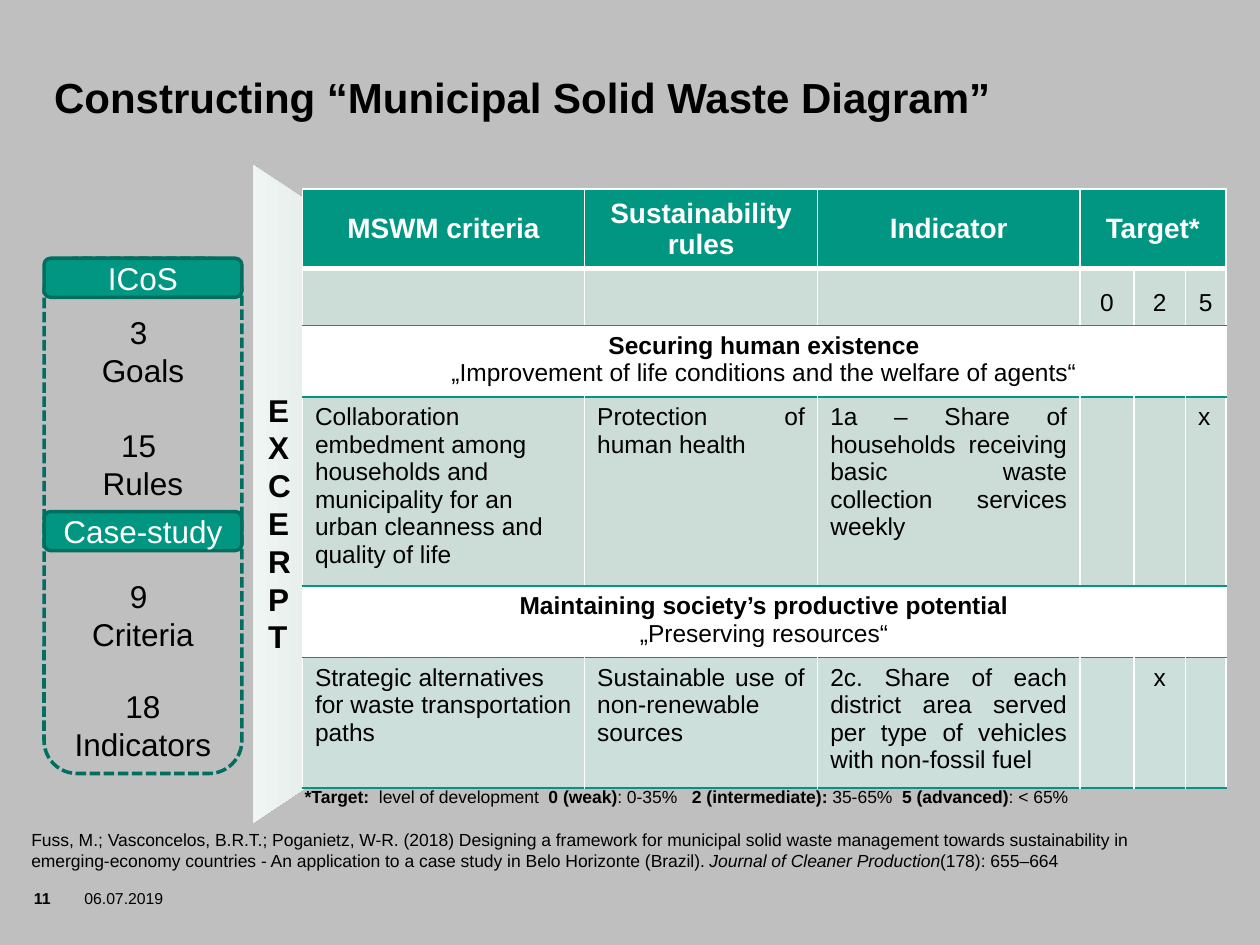
from copy import deepcopy

from lxml.etree import SubElement
from pptx import Presentation
from pptx.dml.color import RGBColor
from pptx.enum.dml import MSO_LINE
from pptx.enum.shapes import MSO_SHAPE
from pptx.enum.text import MSO_ANCHOR, PP_ALIGN
from pptx.oxml.ns import qn
from pptx.util import Inches, Pt

WIDTH, HEIGHT = Inches(10), Inches(7.5)
GREEN, DARK_GREEN, MINT, PALE_MINT = "009682", "006F60", "CCDDD8", "CCDFDA"
BLACK, WHITE, GREY = "000000", "FFFFFF", "BFBFBF"
LEFT, CENTER, JUSTIFY = PP_ALIGN.LEFT, PP_ALIGN.CENTER, PP_ALIGN.JUSTIFY

PANEL_LEFT, PANEL_TOP, PANEL_WIDTH = 3.5, 27.33, 15.7
COLUMNS = [22.4, 18.5, 20.8, 4.3, 4.1, 3.2]
ROWS = [8.27, 5.2, 7.47, 19.73, 7.47, 13.6]


def color(value):
    return RGBColor.from_string(value)


def across(percent):
    return round(WIDTH * percent / 100)


def down(percent):
    return round(HEIGHT * percent / 100)


def area(left, top, width, height):
    return across(left), down(top), across(width), down(height)


def paint(fill, value):
    fill.solid()
    fill.fore_color.rgb = color(value)


def write(frame, lines, size, ink=BLACK, align=LEFT, bold=False):
    frame.text = "\n".join(lines)
    for paragraph in frame.paragraphs:
        paragraph.alignment = align
        for run in paragraph.runs:
            style(run, size, ink, bold)


def style(run, size, ink=BLACK, bold=False, italic=False):
    run.font.name = "Arial"
    run.font.size = Pt(size)
    run.font.color.rgb = color(ink)
    run.font.bold = bold
    run.font.italic = italic


def add_text(slide, place, lines, size, bold=False, inset=True, anchor=MSO_ANCHOR.TOP):
    frame = slide.shapes.add_textbox(*area(*place)).text_frame
    frame.word_wrap = True
    frame.vertical_anchor = anchor
    if not inset:
        frame.margin_left = frame.margin_right = 0
        frame.margin_top = frame.margin_bottom = 0
    write(frame, lines, size, bold=bold)
    return frame


def add_mixed_text(slide, place, pieces, size):
    paragraph = add_text(slide, place, [], size).paragraphs[0]
    for words, bold, italic in pieces:
        run = paragraph.add_run()
        run.text = words
        style(run, size, bold=bold, italic=italic)


def add_funnel(slide):
    funnel = slide.shapes.add_shape(
        MSO_SHAPE.ISOSCELES_TRIANGLE, *area(13.7, 26, 52.2, 52.53))
    funnel.rotation = 90
    funnel.shadow.inherit = False
    funnel.line.fill.background()
    funnel.fill.gradient()
    funnel.fill.gradient_angle = 270
    first_stop = funnel._element.spPr.find(".//" + qn("a:gs"))
    first_stop.addnext(deepcopy(first_stop))
    shades = [(0, "8D9190"), (0.5, "C8CECD"), (1, "EEF5F3")]
    for stop, (position, shade) in zip(funnel.fill.gradient_stops, shades):
        stop.position = position
        stop.color.rgb = color(shade)


def add_rounded(slide, top, height):
    rounded = slide.shapes.add_shape(
        MSO_SHAPE.ROUNDED_RECTANGLE, *area(PANEL_LEFT, top, PANEL_WIDTH, height))
    rounded.shadow.inherit = False
    rounded.line.color.rgb = color(DARK_GREEN)
    rounded.line.width = Pt(2)
    return rounded


def add_counts_panel(slide):
    panel = add_rounded(slide, PANEL_TOP, 54.53)
    panel.fill.background()
    panel.line.dash_style = MSO_LINE.SQUARE_DOT
    frame = panel.text_frame
    frame.vertical_anchor = MSO_ANCHOR.TOP
    frame.margin_top = down(4.8)
    counts = ["3 ", "Goals", "15 ", "Rules", "9 ", "Criteria", "18 Indicators"]
    write(frame, counts, 18, align=CENTER)
    for index, gap in {2: 21.5, 4: 43, 6: 19.5}.items():
        frame.paragraphs[index].space_before = Pt(gap)


def add_panel_heading(slide, top, heading):
    banner = add_rounded(slide, top, 4.13)
    paint(banner.fill, GREEN)
    banner.text_frame.vertical_anchor = MSO_ANCHOR.MIDDLE
    write(banner.text_frame, [heading], 18, WHITE, CENTER)


def set_borders(cell, row):
    top = (WHITE, 1) if row == 0 else (WHITE, 3) if row == 1 else (GREEN, 1)
    bottom = (WHITE, 3) if row == 0 else (GREEN, 1)
    edges = {"lnL": (WHITE, 1), "lnR": (WHITE, 1), "lnT": top, "lnB": bottom}
    properties = cell._tc.get_or_add_tcPr()
    for edge, (ink, points) in edges.items():
        line = SubElement(properties, qn(f"a:{edge}"), w=str(Pt(points)))
        fill = SubElement(line, qn("a:solidFill"))
        SubElement(fill, qn("a:srgbClr"), val=ink)


def add_criteria_table(slide):
    place = area(24, 20, sum(COLUMNS), sum(ROWS))
    table = slide.shapes.add_table(len(ROWS), len(COLUMNS), *place).table
    for column, width in zip(table.columns, COLUMNS):
        column.width = across(width)
    for row, height in zip(table.rows, ROWS):
        row.height = down(height)

    fills = [GREEN, MINT, WHITE, MINT, WHITE, PALE_MINT]
    for row, fill in enumerate(fills):
        for column in range(len(COLUMNS)):
            cell = table.cell(row, column)
            set_borders(cell, row)
            paint(cell.fill, fill)

    for row, first in [(0, 3), (2, 0), (4, 0)]:
        table.cell(row, first).merge(table.cell(row, len(COLUMNS) - 1))

    headings = ["MSWM criteria", "Sustainability rules", "Indicator", "Target*"]
    for column, heading in enumerate(headings):
        cell = table.cell(0, column)
        cell.vertical_anchor = MSO_ANCHOR.MIDDLE
        write(cell.text_frame, [heading], 16, WHITE, CENTER, True)

    for column, level in enumerate("025", start=3):
        frame = table.cell(1, column).text_frame
        write(frame, [level], 14, align=CENTER)
        frame.paragraphs[0].line_spacing = 1.5

    goals = {
        2: ["Securing human existence",
            "„Improvement of life conditions and the welfare of agents“"],
        4: ["Maintaining society’s productive potential", "„Preserving resources“"],
    }
    for row, lines in goals.items():
        frame = table.cell(row, 0).text_frame
        write(frame, lines, 14, align=CENTER)
        frame.paragraphs[0].runs[0].font.bold = True

    entries = {
        3: ["Collaboration embedment among households and municipality for an "
            "urban cleanness and quality of life",
            "Protection of human health",
            "1a – Share of households receiving basic waste collection services weekly"],
        5: ["Strategic alternatives for waste transportation paths",
            "Sustainable use of non-renewable sources",
            "2c. Share of each district area served per type of vehicles "
            "with non-fossil fuel"],
    }
    for row, texts in entries.items():
        for column, (entry, align) in enumerate(zip(texts, [LEFT, JUSTIFY, JUSTIFY])):
            write(table.cell(row, column).text_frame, [entry], 14, align=align)
    for row, column, align in [(3, 5, LEFT), (5, 4, CENTER)]:
        write(table.cell(row, column).text_frame, ["x"], 14, align=align)


def main():
    deck = Presentation()
    deck.slide_width, deck.slide_height = WIDTH, HEIGHT
    slide = deck.slides.add_slide(deck.slide_layouts[6])
    paint(slide.background.fill, GREY)

    add_text(slide, (2.7, 94, 3.6, 3.2), ["11"], 9, bold=True, inset=False)
    add_text(slide, (6.7, 94, 9.4, 5.2), ["06.07.2019"], 9, inset=False)
    add_funnel(slide)
    add_text(slide, (4.3, 4.8, 75.6, 8.13),
             ["Constructing “Municipal Solid Waste Diagram”"],
             24, bold=True, inset=False, anchor=MSO_ANCHOR.BOTTOM)
    add_criteria_table(slide)
    add_counts_panel(slide)
    add_panel_heading(slide, PANEL_TOP, "ICoS")
    add_panel_heading(slide, 54.13, "Case-study")
    add_text(slide, (20.3, 40.67, 4, 30.93), list("EXCERPT"), 18, bold=True)

    add_mixed_text(slide, (23.2, 82.53, 73, 3.6), [
        ("*Target:  ", True, False), ("level of development  ", False, False),
        ("0 (weak)", True, False), (": 0-35%   ", False, False),
        ("2 (intermediate): ", True, False), ("35-65%  ", False, False),
        ("5 (advanced)", True, False), (": < 65%", False, False)], 10)
    add_mixed_text(slide, (1.5, 87.07, 95.4, 5.87), [
        ("Fuss, M.; Vasconcelos, B.R.T.; Poganietz, W-R. (2018) Designing a framework "
         "for municipal solid waste management towards sustainability in "
         "emerging-economy countries - An application to a case study in "
         "Belo Horizonte (Brazil). ", False, False),
        ("Journal of Cleaner Production", False, True),
        ("(178): 655–664", False, False)], 10)
    deck.save("out.pptx")


if __name__ == "__main__":
    main()
